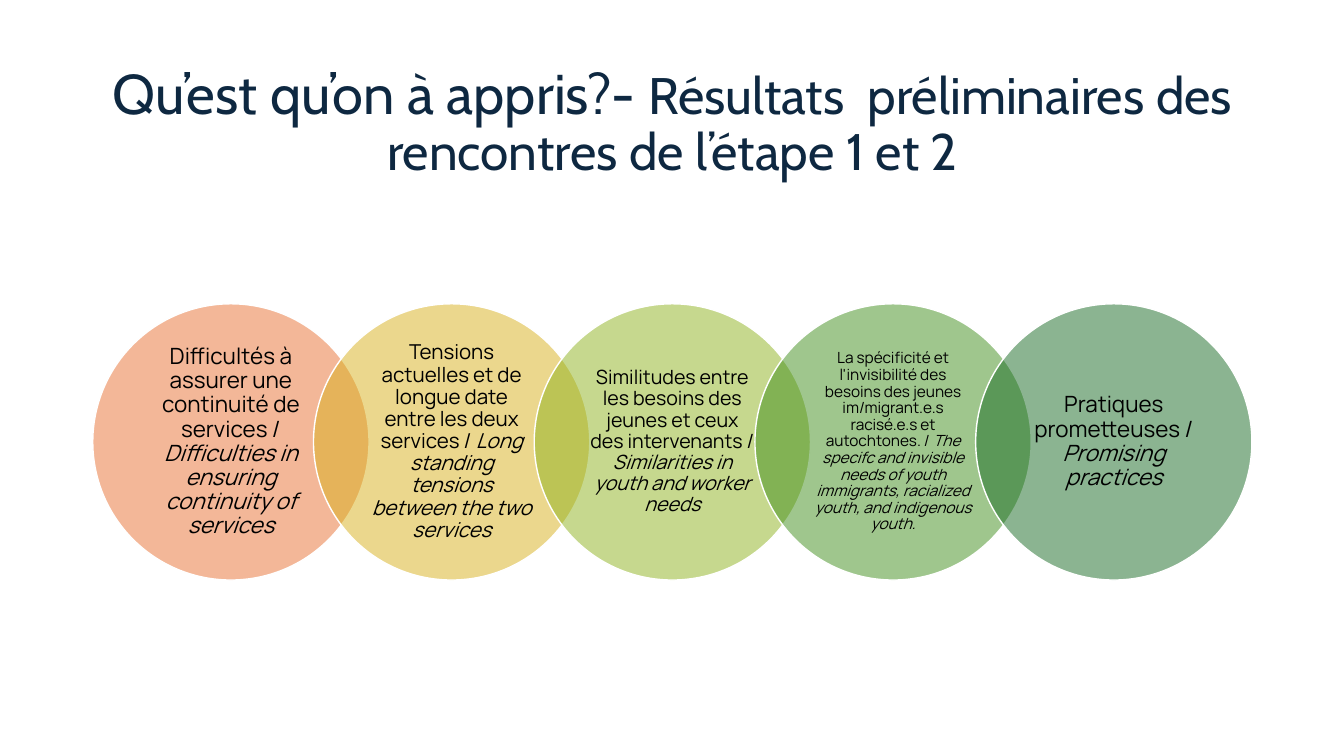
from dataclasses import dataclass

from lxml.etree import SubElement
from pptx import Presentation
from pptx.dml.color import RGBColor
from pptx.enum.shapes import MSO_SHAPE
from pptx.enum.text import MSO_ANCHOR, PP_ALIGN
from pptx.oxml.ns import qn
from pptx.util import Pt


@dataclass(frozen=True)
class Theme:
    """Colours, fonts and type sizes of the slide."""
    heading_font: str = "Cabin"
    body_font: str = "Manrope"
    navy: str = "0E2841"
    black: str = "000000"
    white: str = "FFFFFF"
    circles: tuple = ("E97132", "D8B11D", "8EB21E", "408E1C", "196B24")
    circle_opacity: int = 50
    circle_sizes: tuple = (24, 22, 21, 16.5, 24)
    question_size: float = 60
    subtitle_size: float = 55


THEME = Theme()

TITLE = ("Qu’est qu’on à appris?- ",
         "Résultats  préliminaires des rencontres de l’étape 1 et 2")

FINDINGS = (
    ("Difficultés à assurer une continuité de services / ",
     "Difficulties in ensuring continuity of services"),
    ("Tensions actuelles et de longue date entre les deux services / ",
     "Long standing tensions between the two services"),
    ("Similitudes entre les besoins des jeunes et ceux des intervenants / ",
     "Similarities in youth and worker needs"),
    ("La spécificité et l'invisibilité des besoins des jeunes im/migrant.e.s "
     "racisé.e.s et autochtones. / ",
     "The specifc and invisible needs of youth immigrants, racialized youth, "
     "and indigenous youth."),
    ("Pratiques prometteuses / ", "Promising practices"),
)


def add_run(paragraph, text, *, font, size, color, italic=False):
    """Append formatted text to a paragraph."""
    run = paragraph.add_run()
    run.text = text
    run.font.name = font
    run.font.size = Pt(size)
    run.font.italic = italic
    run.font.color.rgb = RGBColor.from_string(color)


def add_centred_paragraph(shapes, box, *, insets, space_after):
    """Add a text box centred both ways and return its paragraph."""
    frame = shapes.add_textbox(*map(Pt, box)).text_frame
    frame.word_wrap = True
    frame.vertical_anchor = MSO_ANCHOR.MIDDLE
    frame.margin_left = frame.margin_right = Pt(insets[0])
    frame.margin_top = frame.margin_bottom = Pt(insets[1])
    paragraph = frame.paragraphs[0]
    paragraph.alignment = PP_ALIGN.CENTER
    paragraph.line_spacing = 0.9
    paragraph.space_after = Pt(space_after)
    return paragraph


def add_title(slide, box):
    """Write the question and its subtitle as one centred heading."""
    heading = add_centred_paragraph(slide.shapes, box, insets=(7.2, 3.6), space_after=6)
    for text, size in zip(TITLE, (THEME.question_size, THEME.subtitle_size)):
        add_run(heading, text, font=THEME.heading_font, size=size, color=THEME.navy)


def add_circle(shapes, box, color):
    """Draw a translucent circle with a white outline."""
    circle = shapes.add_shape(MSO_SHAPE.OVAL, *map(Pt, box))
    circle.shadow.inherit = False
    circle.fill.solid()
    circle.fill.fore_color.rgb = RGBColor.from_string(color)
    tint = circle.fill._xPr.find(qn("a:solidFill"))[0]
    SubElement(tint, qn("a:alpha"), val=str(THEME.circle_opacity * 1000))
    circle.line.color.rgb = RGBColor.from_string(THEME.white)
    circle.line.width = Pt(1.5)


def add_findings(slide, box):
    """Spread overlapping circles over the box, each with a bilingual finding."""
    left, top, width, diameter = box
    pitch = (width - diameter) / (len(FINDINGS) - 1)
    label_side = diameter / 2 ** 0.5
    margin = (diameter - label_side) / 2
    shapes = slide.shapes.add_group_shape().shapes
    rows = zip(FINDINGS, THEME.circles, THEME.circle_sizes)
    for index, ((french, english), color, size) in enumerate(rows):
        x = left + index * pitch
        add_circle(shapes, (x, top, diameter, diameter), color)
        label_box = (x + margin, top + margin, label_side, label_side)
        label = add_centred_paragraph(shapes, label_box, insets=(16.3, 2),
                                      space_after=0.35 * size)
        style = dict(font=THEME.body_font, size=size, color=THEME.black)
        add_run(label, french, **style)
        add_run(label, english, italic=True, **style)


def main():
    """Build the slide and save it."""
    deck = Presentation()
    deck.slide_width, deck.slide_height = Pt(1440), Pt(810)
    slide = deck.slides.add_slide(deck.slide_layouts[6])
    add_title(slide, (99.4, 65.5, 1242, 134))
    add_findings(slide, (99.4, 325.5, 1242, 296))
    deck.save("out.pptx")


if __name__ == "__main__":
    main()
